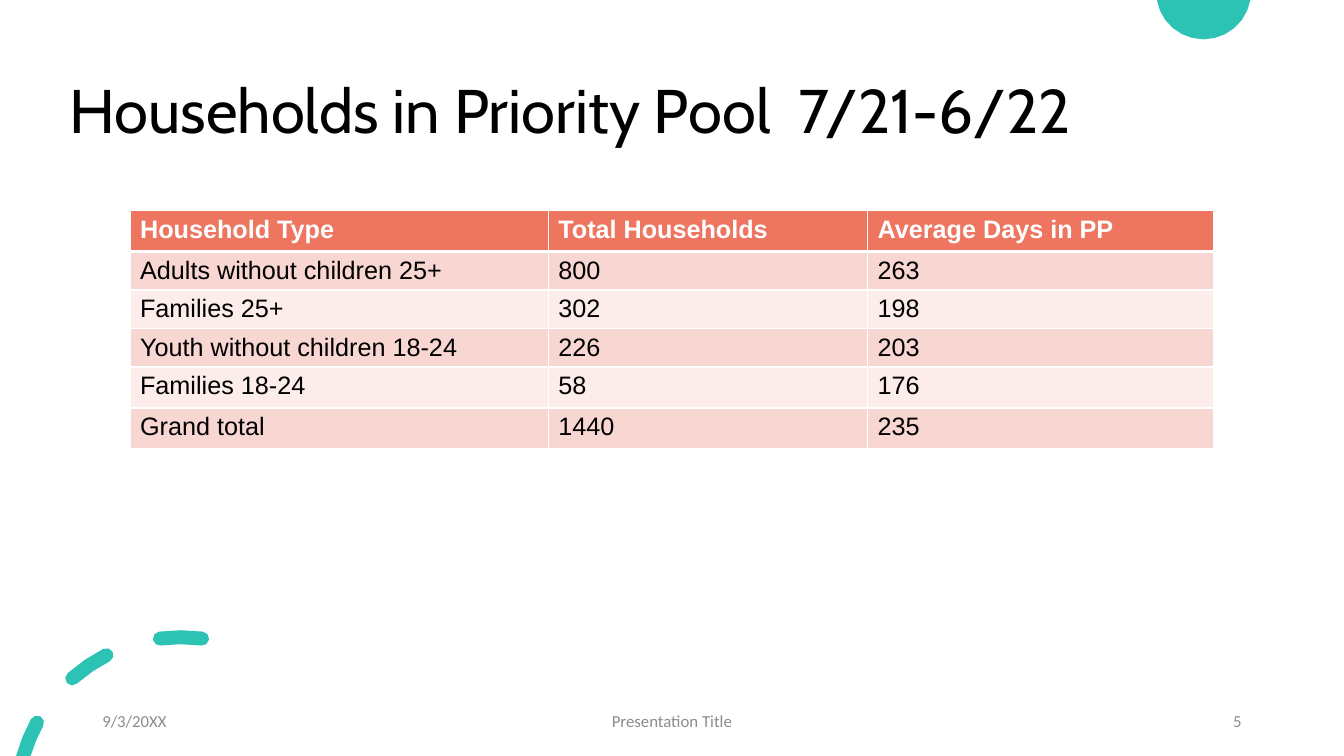
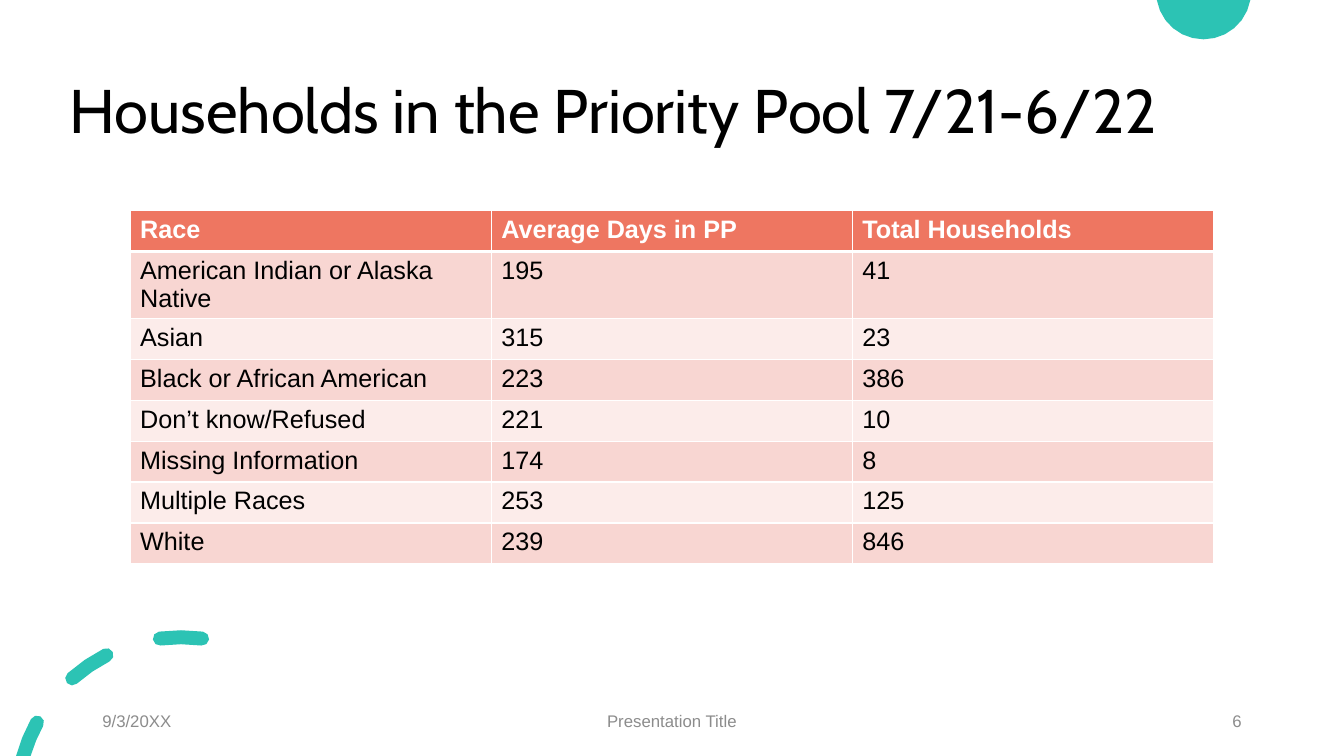
import math

import pptx
import pptx.dml.color
import pptx.enum.text
import pptx.oxml
import pptx.oxml.ns
import pptx.util

Pt = pptx.util.Pt
ALIGN = pptx.enum.text.PP_ALIGN

# Content
SLIDES = [
    {
        "title": "Households in Priority Pool  7/21-6/22",
        "number": "5",
        "footer_font": "Calibri",
        "columns": [298.8, 228, 247.2],
        "heights": [29.2, 27.5, 27.5, 27.5, 29.2, 29.2],
        "rows": [
            ("Household Type", "Total Households", "Average Days in PP"),
            ("Adults without children 25+", "800", "263"),
            ("Families 25+", "302", "198"),
            ("Youth without children 18-24", "226", "203"),
            ("Families 18-24", "58", "176"),
            ("Grand total", "1440", "235"),
        ],
    },
    {
        "title": "Households in the Priority Pool 7/21-6/22",
        "number": "6",
        "footer_font": "Arial",
        "columns": [258] * 3,
        "heights": [29.2, 47.9] + [29.2] * 6,
        "rows": [
            ("Race", "Average Days in PP", "Total Households"),
            ("American Indian or Alaska Native", "195", "41"),
            ("Asian", "315", "23"),
            ("Black or African American", "223", "386"),
            ("Don’t know/Refused", "221", "10"),
            ("Missing Information", "174", "8"),
            ("Multiple Races", "253", "125"),
            ("White", "239", "846"),
        ],
    },
]

# Shared style
WIDTH, HEIGHT = 960, 540
TEAL, CORAL, WHITE, BLACK, GREY = "2CC3B4", "EE7661", "FFFFFF", "000000", "8C8C8C"
BANDS = ["FCECEA", "F8D6D2"]
TABLE_LEFT, TABLE_TOP = 92.9, 150.5
FOOTER_TOP, FOOTER_HEIGHT = 500.4, 28.8

# Decoration: a disc cut by the top edge and a dashed ring cut by the bottom edge
DISC_CENTRE, DISC_RADIUS = (859.7, -5.8), 33.9
RING_CENTRE, RING_RADIUS, DASH_RADIUS = (129.3, 572.4), 117.2, 5
RING_DASHES = [(-7.4, 7.4), (27, 41.5)]
LAST_DASH_START = 61.3


def color(value):
    return pptx.dml.color.RGBColor.from_string(value)


def polar(centre, radius, angle):
    """Point on a circle; degrees run counter-clockwise from the top."""
    turn = math.radians(angle)
    return centre[0] - radius * math.sin(turn), centre[1] - radius * math.cos(turn)


def arc(centre, radius, start, end, steps):
    return [polar(centre, radius, start + (end - start) * step / steps)
            for step in range(steps + 1)]


def edge_angle(centre, radius, edge):
    """Angle at which a circle meets a horizontal edge."""
    return math.degrees(math.acos((centre[1] - edge) / radius))


def round_cap(angle, turn):
    """Inner points of the half circle that ends a dash."""
    middle = polar(RING_CENTRE, RING_RADIUS, angle)
    return arc(middle, DASH_RADIUS, angle + turn, angle + turn + 180, 4)[1:-1]


def dash(start, end=None):
    """Ring segment with round ends; without an end it runs off the slide."""
    outer, inner = RING_RADIUS + DASH_RADIUS, RING_RADIUS - DASH_RADIUS
    if end is None:
        outer_end = edge_angle(RING_CENTRE, outer, HEIGHT)
        inner_end = edge_angle(RING_CENTRE, inner, HEIGHT)
        end_cap = []
    else:
        outer_end = inner_end = end
        end_cap = round_cap(end, 0)
    return (arc(RING_CENTRE, outer, start, outer_end, 2) + end_cap
            + arc(RING_CENTRE, inner, inner_end, start, 2) + round_cap(start, 180))


def add_outline(page, contours):
    contours = [[(Pt(x), Pt(y)) for x, y in contour] for contour in contours]
    builder = page.shapes.build_freeform(*contours[0][0], scale=1.0)
    for index, contour in enumerate(contours):
        if index:
            builder.move_to(*contour[0])
        builder.add_line_segments(contour[1:], close=True)
    shape = builder.convert_to_shape()
    shape.shadow.inherit = False
    shape.fill.solid()
    shape.fill.fore_color.rgb = color(TEAL)
    shape.line.fill.background()


def style_text(para, font, size, ink, bold=False):
    para.font.name = font
    para.font.size = Pt(size)
    para.font.bold = bold
    para.font.color.rgb = color(ink)


def add_text(page, text, place, font, size, ink, align=ALIGN.LEFT, spacing=1.0):
    box = page.shapes.add_textbox(*map(Pt, place))
    box.text_frame.word_wrap = True
    box.text_frame.vertical_anchor = pptx.enum.text.MSO_ANCHOR.MIDDLE
    para = box.text_frame.paragraphs[0]
    para.text = text
    para.alignment = align
    para.line_spacing = spacing
    style_text(para, font, size, ink)


def set_borders(cell, widths):
    """Draw white borders; widths are given as left, right, top, bottom."""
    properties = cell._tc.get_or_add_tcPr()
    for index, (side, width) in enumerate(zip("LRTB", widths)):
        properties.insert(index, pptx.oxml.parse_xml(
            f'<a:ln{side} {pptx.oxml.ns.nsdecls("a")} w="{Pt(width)}">'
            f'<a:solidFill><a:srgbClr val="{WHITE}"/></a:solidFill></a:ln{side}>'))


def add_data_table(page, rows, columns, heights):
    frame = page.shapes.add_table(
        len(rows), len(columns), Pt(TABLE_LEFT), Pt(TABLE_TOP),
        Pt(sum(columns)), Pt(sum(heights)))
    table = frame.table
    table.horz_banding = False
    for column, width in zip(table.columns, columns):
        column.width = Pt(width)
    for row_index, (row, height) in enumerate(zip(rows, heights)):
        table.rows[row_index].height = Pt(height)
        header = row_index == 0
        for column_index, text in enumerate(row):
            cell = table.cell(row_index, column_index)
            cell.text = text
            cell.margin_bottom = Pt(0.5)
            cell.fill.solid()
            cell.fill.fore_color.rgb = color(CORAL if header else BANDS[row_index % 2])
            style_text(cell.text_frame.paragraphs[0], "Arial", 18,
                       WHITE if header else BLACK, bold=header)
            set_borders(cell, (1, 1, 3 if row_index == 1 else 1, 3 if header else 1))


def add_frame(page, title, number, footer_font):
    """Decoration, title and footer that every slide carries."""
    disc_edge = edge_angle(DISC_CENTRE, DISC_RADIUS, 0)
    add_outline(page, [arc(DISC_CENTRE, DISC_RADIUS, disc_edge, 360 - disc_edge, 12)])
    add_outline(page, [dash(LAST_DASH_START)] + [dash(*span) for span in RING_DASHES])
    add_text(page, title, (42.5, 28.8, 828, 104.4), "Cabin", 44, BLACK, spacing=0.9)
    footers = [
        ("9/3/20XX", 66, 216, ALIGN.LEFT),
        ("Presentation Title", 318, 324, ALIGN.CENTER),
        (number, 678, 216, ALIGN.RIGHT),
    ]
    for text, left, width, align in footers:
        add_text(page, text, (left, FOOTER_TOP, width, FOOTER_HEIGHT),
                 footer_font, 12, GREY, align)


def main():
    deck = pptx.Presentation()
    deck.slide_width, deck.slide_height = Pt(WIDTH), Pt(HEIGHT)
    for content in SLIDES:
        page = deck.slides.add_slide(deck.slide_layouts[6])
        add_frame(page, content["title"], content["number"], content["footer_font"])
        add_data_table(page, content["rows"], content["columns"], content["heights"])
    deck.save("out.pptx")


if __name__ == "__main__":
    main()
